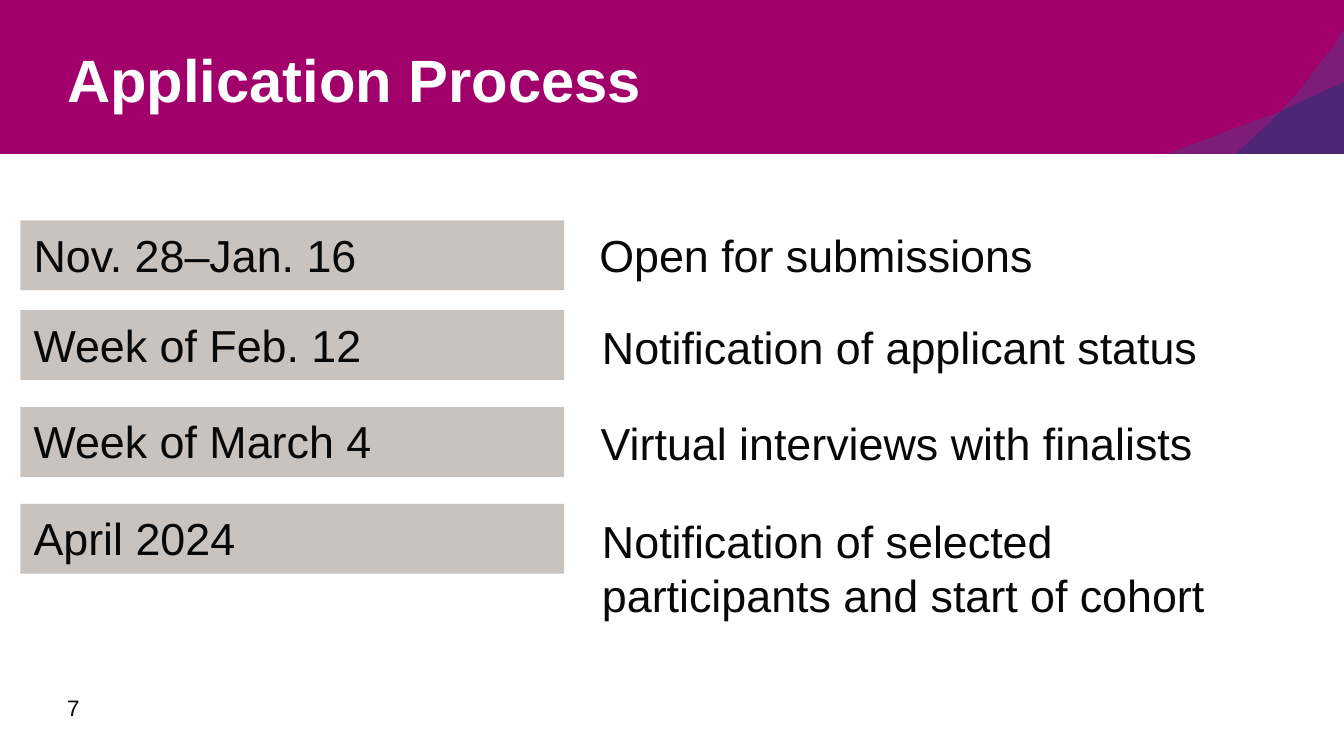
"""Builds the Application Process timeline slide."""
from dataclasses import dataclass

from pptx import Presentation
from pptx.dml.color import RGBColor
from pptx.enum.shapes import MSO_SHAPE
from pptx.enum.text import MSO_ANCHOR, PP_ALIGN
from pptx.util import Pt


@dataclass(frozen=True)
class Theme:
    """Colours and type sizes of the slide."""
    magenta: str = "A1006B"
    violet: str = "7E1D78"
    indigo: str = "4E2774"
    stone: str = "C8C3BE"
    ink: str = "06080A"
    white: str = "FFFFFF"
    font: str = "Arial"
    title_size: int = 32
    body_size: int = 24
    number_size: int = 12
    body_leading: int = 29


THEME = Theme()
BANNER_HEIGHT = 82.5
CREST = (686.2, 59.5)
FOLD = (674.6, 70.6)
BASE = (661.7, BANNER_HEIGHT)
EDGE = (720, 43.9)

FACETS = [
    (THEME.violet, [(720, 15.8), (713.5, 25.9), (705.6, 36), (697, 47.5),
                    CREST, (703.4, 51.8), EDGE]),
    (THEME.indigo, [BASE, (720, BANNER_HEIGHT), EDGE, CREST, FOLD]),
    (THEME.violet, [CREST, (656.6, 70.6), (625, BANNER_HEIGHT), BASE, FOLD]),
]

STAGES = [
    (118, "Nov. 28–Jan. 16", (314, 118.2, 365, 36), "Open for submissions"),
    (166.2, "Week of Feb. 12", (315.4, 167.5, 377, 36), "Notification of applicant status"),
    (218.1, "Week of March 4", (314.7, 219, 386, 36), "Virtual interviews with finalists"),
    (270, "April 2024", (315.4, 271.4, 358, 65.5),
     "Notification of selected participants and start of cohort"),
]


def paint(shape, color):
    """Give a shape a flat fill with no line or shadow."""
    shape.fill.solid()
    shape.fill.fore_color.rgb = RGBColor.from_string(color)
    shape.line.fill.background()
    shape.shadow.inherit = False


def add_block(slide, box, color):
    """Add a filled rectangle."""
    block = slide.shapes.add_shape(MSO_SHAPE.RECTANGLE, *map(Pt, box))
    paint(block, color)
    return block


def add_facet(slide, color, corners):
    """Add one facet of the banner's corner ornament."""
    start, *rest = [(Pt(x), Pt(y)) for x, y in corners]
    builder = slide.shapes.build_freeform(*start)
    builder.add_line_segments(rest, close=True)
    paint(builder.convert_to_shape(), color)


def write(shape, wording, size, color=THEME.ink, bold=False, leading=None,
          anchor=MSO_ANCHOR.TOP):
    """Set and format the text of a shape."""
    frame = shape.text_frame
    frame.text = wording
    frame.word_wrap = True
    frame.vertical_anchor = anchor
    paragraph = frame.paragraphs[0]
    paragraph.alignment = PP_ALIGN.LEFT
    if leading:
        paragraph.line_spacing = leading
    for run in paragraph.runs:
        run.font.name = THEME.font
        run.font.size = Pt(size)
        run.font.bold = bold
        run.font.color.rgb = RGBColor.from_string(color)


def add_label(slide, box, wording, size, inset=True, **style):
    """Add a text box, with or without inner margins."""
    label = slide.shapes.add_textbox(*map(Pt, box))
    write(label, wording, size, **style)
    if not inset:
        frame = label.text_frame
        frame.margin_left = frame.margin_right = 0
        frame.margin_top = frame.margin_bottom = 0


def add_stage(slide, top, period, event_box, event):
    """Add a dated block and the event beside it."""
    leading = Pt(THEME.body_leading)
    block = add_block(slide, (10.9, top, 291.4, 37.4), THEME.stone)
    write(block, period, THEME.body_size, leading=leading)
    add_label(slide, event_box, event, THEME.body_size, leading=leading)


def main():
    """Build and save the slide."""
    deck = Presentation()
    deck.slide_width, deck.slide_height = Pt(720), Pt(405)
    slide = deck.slides.add_slide(deck.slide_layouts[6])

    add_block(slide, (0, 0, 720, BANNER_HEIGHT), THEME.magenta)
    for color, corners in FACETS:
        add_facet(slide, color, corners)
    add_label(slide, (36, 6.5, 648, 75.6), "Application Process", THEME.title_size,
              inset=False, color=THEME.white, bold=True, leading=0.9,
              anchor=MSO_ANCHOR.MIDDLE)
    for stage in STAGES:
        add_stage(slide, *stage)
    add_label(slide, (36, 371.8, 16, 19.4), "7", THEME.number_size, inset=False)

    deck.save("out.pptx")


if __name__ == "__main__":
    main()
